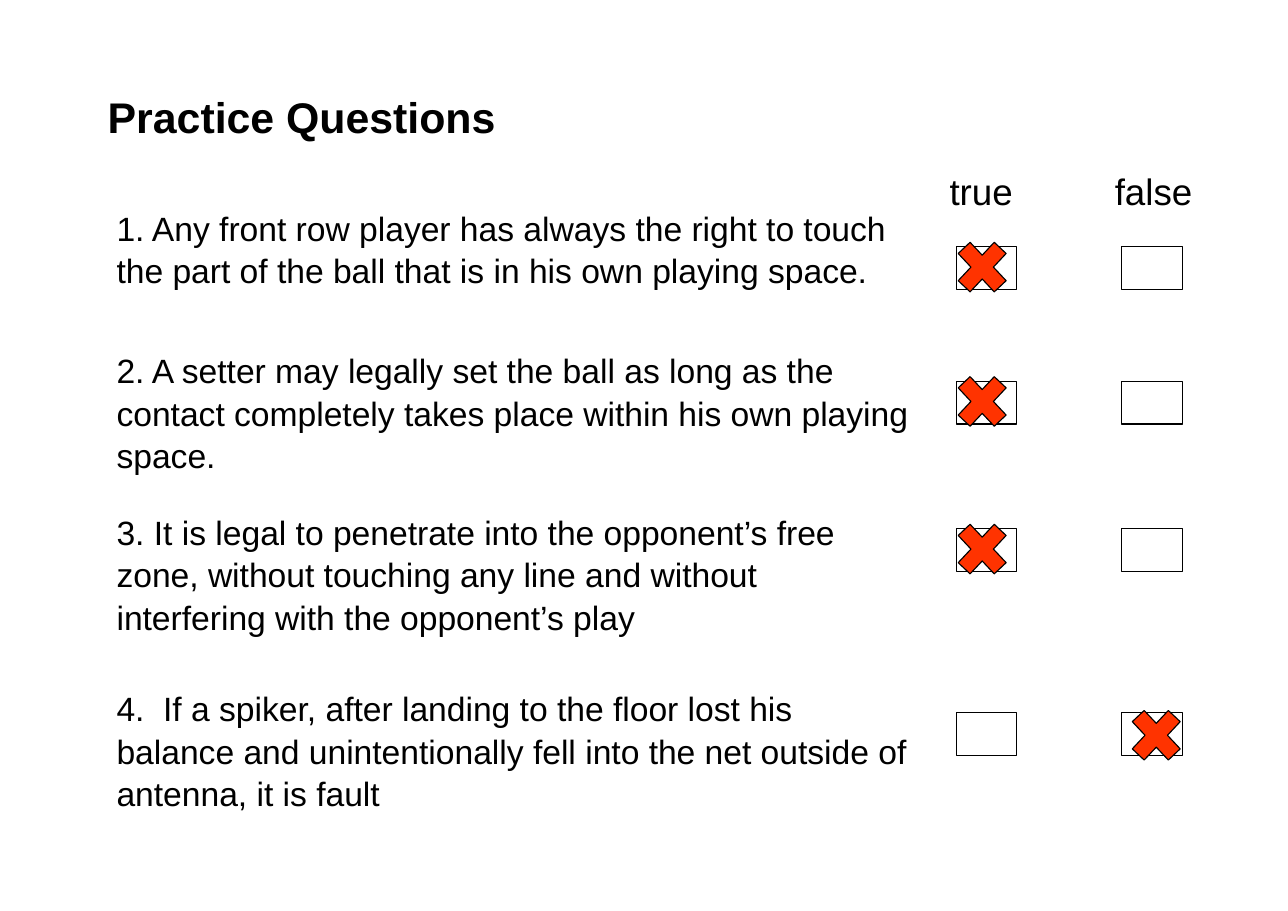
from pptx import Presentation
from pptx.dml.color import RGBColor
from pptx.enum import shapes
from pptx.util import Inches, Pt

BLACK = "000000"
RED = "FF3300"
COLUMN_GAP = 1.5
BOX_LEFT = 8.68
QUESTIONS = [
    (1.82, 2.24, 2.09, True,
     "1. Any front row player has always the right to touch the part of the "
     "ball that is in his own playing space."),
    (3.11, 3.46, 3.31, True,
     "2. A setter may legally set the ball as long as the contact completely "
     "takes place within his own playing space."),
    (4.58, 4.8, 4.65, True,
     "3. It is legal to penetrate into the opponent’s free zone, without "
     "touching any line and without interfering with the opponent’s play"),
    (6.18, 6.47, 6.34, False,
     "4.  If a spiker, after landing to the floor lost his balance and "
     "unintentionally fell into the net outside of antenna, it is fault"),
]


def color(value):
    return RGBColor.from_string(value)


def add_text(slide, content, left, top, width, height, size, bold=False):
    sp = slide.shapes.add_textbox(Inches(left), Inches(top), Inches(width), Inches(height))
    tf = sp.text_frame
    tf.word_wrap = True
    p = tf.paragraphs[0]
    p.text = content
    p.line_spacing = 1.05
    p.font.name = "Arial"
    p.font.size = Pt(size)
    p.font.bold = bold
    p.font.color.rgb = color(BLACK)


def add_outlined(slide, kind, left, top, width, height, fill=None):
    sp = slide.shapes.add_shape(kind, Inches(left), Inches(top), Inches(width), Inches(height))
    sp.shadow.inherit = False
    if fill:
        sp.fill.solid()
        sp.fill.fore_color.rgb = color(fill)
    else:
        sp.fill.background()
    sp.line.color.rgb = color(BLACK)
    sp.line.width = Pt(0.75)


def add_checkbox(slide, left, top):
    add_outlined(slide, shapes.MSO_SHAPE.RECTANGLE, left, top, 0.55, 0.39)


def add_cross(slide, left, top):
    add_outlined(slide, shapes.MSO_SHAPE.MATH_MULTIPLY, left, top, 0.63, 0.67, RED)


def main():
    prs = Presentation()
    prs.slide_width = Inches(11.69)
    prs.slide_height = Inches(8.27)
    slide = prs.slides.add_slide(prs.slide_layouts[6])

    add_text(slide, "Practice Questions", 0.88, 0.75, 7.56, 0.57, 28, bold=True)
    for column, label in enumerate(("true", "false")):
        add_text(slide, label, 8.52 + column * COLUMN_GAP, 1.46, 1.1, 0.51, 24)

    for text_top, box_top, cross_top, answer, question in QUESTIONS:
        add_text(slide, question, 0.96, text_top, 7.4, 1.21, 22)
        for column in range(2):
            add_checkbox(slide, BOX_LEFT + column * COLUMN_GAP, box_top)
        add_cross(slide, 8.6 if answer else 10.18, cross_top)

    prs.save("out.pptx")


if __name__ == "__main__":
    main()
